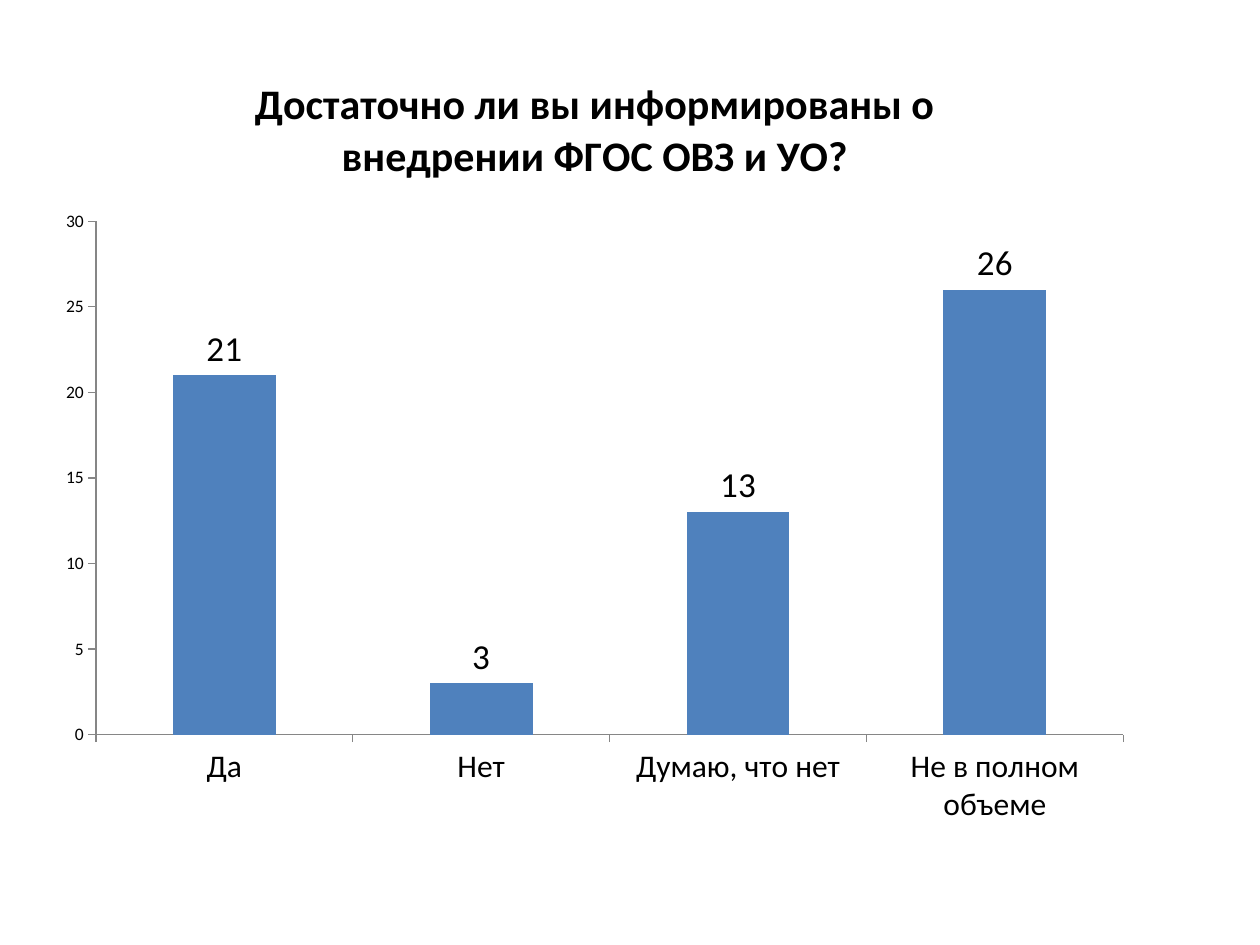
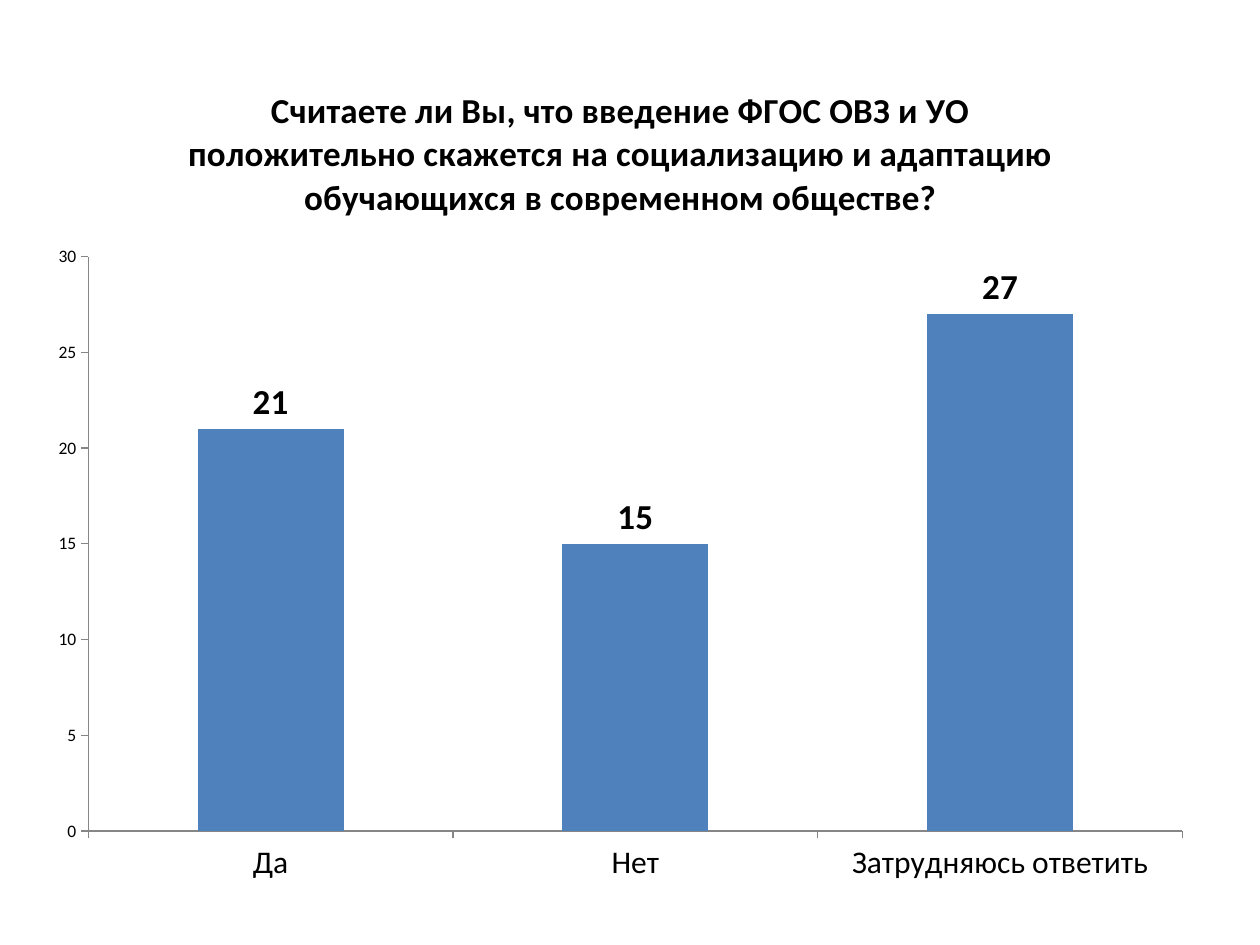
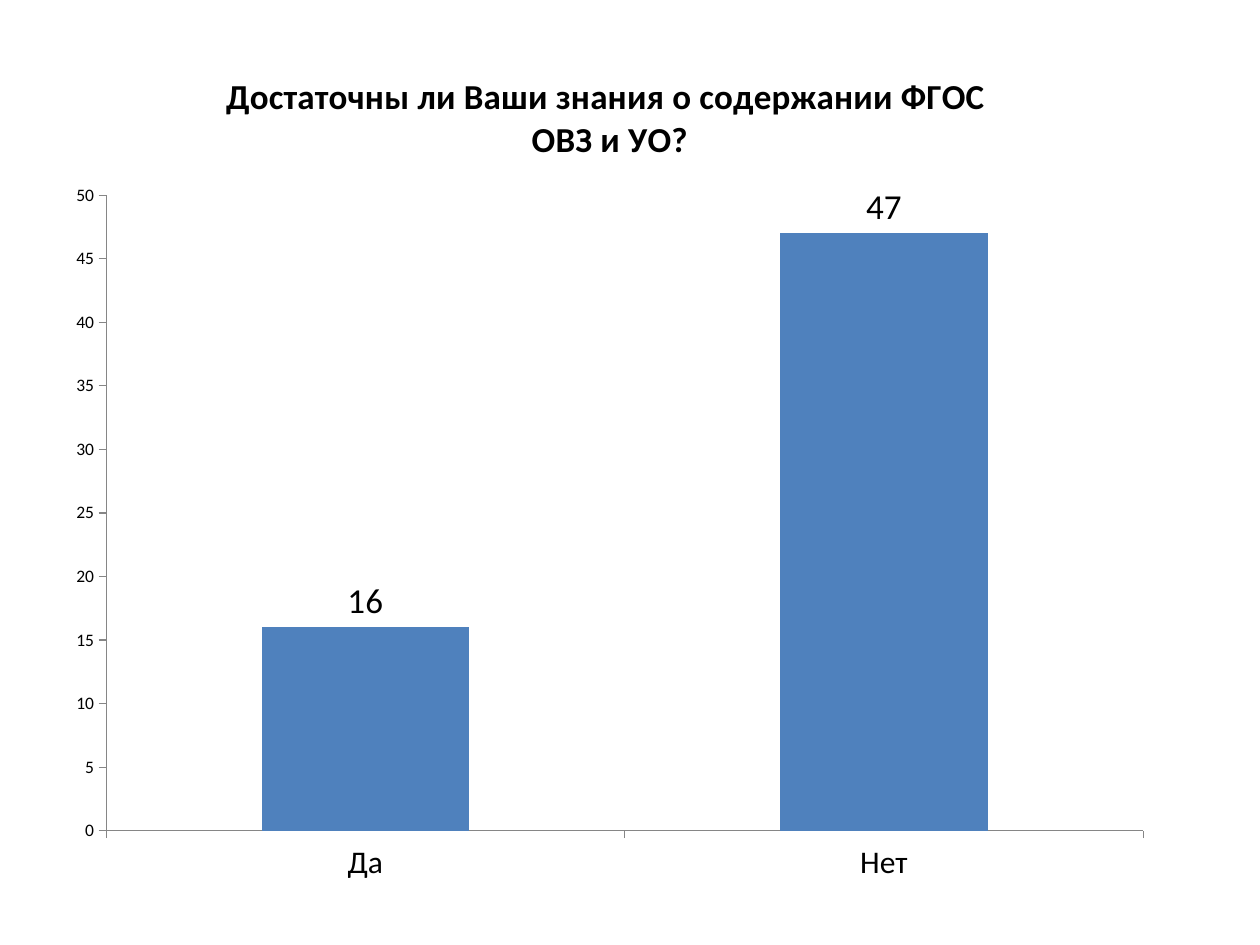
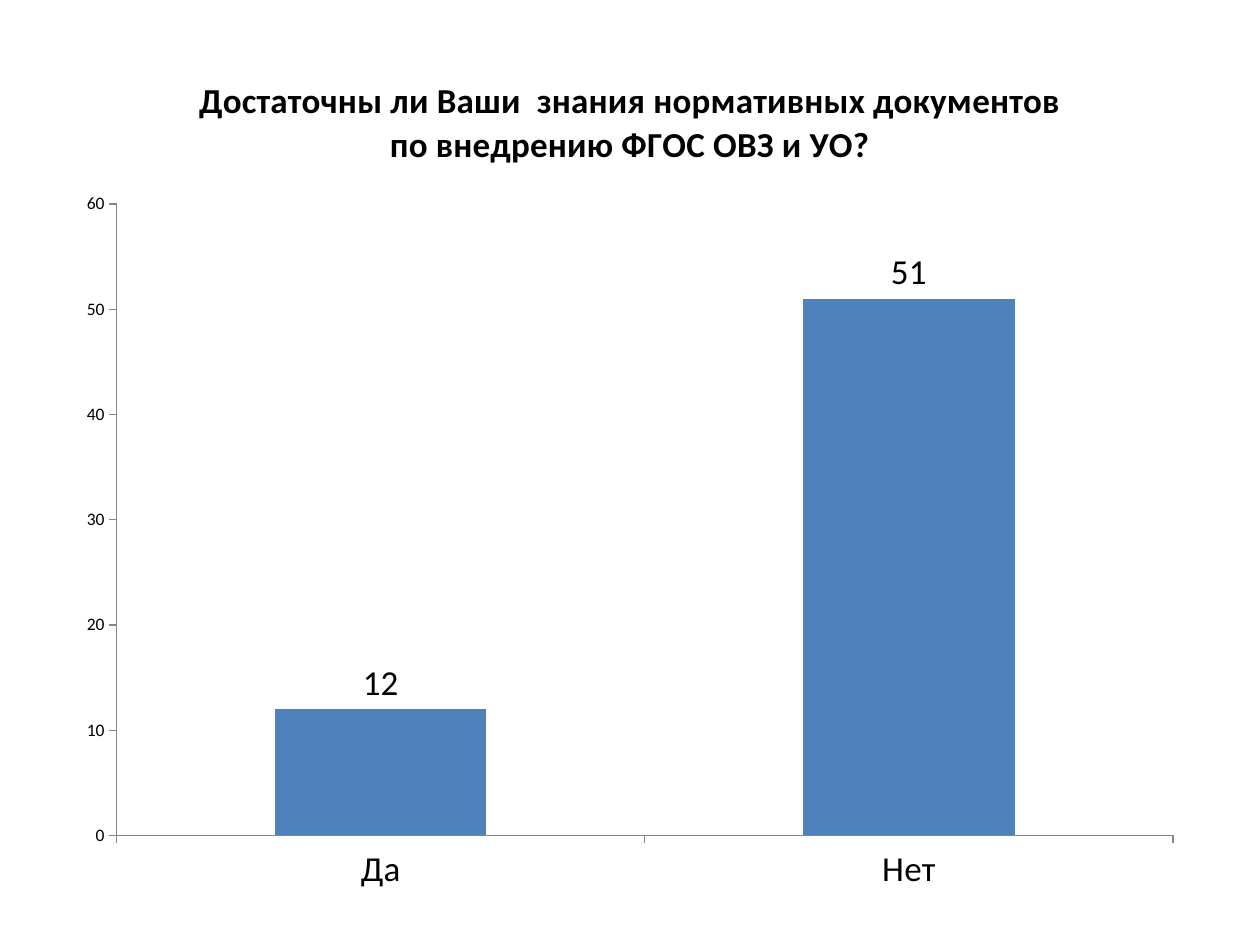
"""Build four slides of survey results, each a titled column chart."""
from dataclasses import dataclass
from typing import Any

from pptx import Presentation
from pptx.chart.data import CategoryChartData
from pptx.dml.color import RGBColor
from pptx.enum.chart import XL_CHART_TYPE as ChartType
from pptx.enum.chart import XL_LABEL_POSITION as LabelPosition
from pptx.enum.chart import XL_TICK_MARK as TickMark
from pptx.util import Emu, Pt

PX = 9144
SLIDE_SIZE = (1000, 750)
BLANK_LAYOUT = 6

BLACK = RGBColor(0x00, 0x00, 0x00)
BLUE = RGBColor(0x4F, 0x81, 0xBD)
GRAY = RGBColor(0x86, 0x86, 0x86)

FONT = "Calibri"
AXIS_FORMAT = {
    "has_major_gridlines": False,
    "has_minor_gridlines": False,
    "major_tick_mark": TickMark.OUTSIDE,
    "minor_tick_mark": TickMark.NONE,
}
PLOT_FORMAT = {"gap_width": 150, "vary_by_categories": False, "has_data_labels": True}
LABEL_FORMAT = {"show_value": True, "position": LabelPosition.OUTSIDE_END}


@dataclass(frozen=True)
class Question:
    """A survey question, its answers and the place of its chart in px."""

    title: str
    answers: dict[str, int]
    box: tuple[int, int, int, int]
    series_name: str = "Series 1"
    title_size: int = 20
    category_size: int = 18
    bold_labels: bool = False


INFORMED = "Достаточно ли вы информированы о внедрении ФГОС ОВЗ и УО?"
DOCUMENTS = "Достаточны ли Ваши  знания нормативных документов по внедрению ФГОС ОВЗ и УО?"

QUESTIONS = [
    Question(
        INFORMED,
        {"Да": 21, "Нет": 3, "Думаю, что нет": 13, "Не в полном объеме": 26},
        (35, 36, 874, 630),
        series_name=INFORMED,
        title_size=24,
    ),
    Question(
        "Считаете ли Вы, что введение ФГОС ОВЗ и УО положительно скажется "
        "на социализацию и адаптацию обучающихся в современном обществе?",
        {"Да": 21, "Нет": 15, "Затрудняюсь ответить": 27},
        (28, 44, 929, 669),
        bold_labels=True,
    ),
    Question(
        "Достаточны ли Ваши знания о содержании ФГОС \nОВЗ и УО?",
        {"Да": 16, "Нет": 47},
        (43, 36, 882, 677),
    ),
    Question(
        DOCUMENTS,
        {"Да": 12, "Нет": 51},
        (51, 36, 898, 685),
        series_name=DOCUMENTS,
        category_size=20,
    ),
]


def px(length: int) -> Emu:
    """Turn px into EMU."""
    return Emu(length * PX)


def set_format(target: Any, values: dict[str, Any]) -> None:
    """Set each attribute named in the format values."""
    for name, value in values.items():
        setattr(target, name, value)


def set_font(font: Any, size: int, bold: bool = False) -> None:
    """Apply the shared typeface and colour at the given size."""
    set_format(font, {"name": FONT, "size": Pt(size), "bold": bold})
    font.color.rgb = BLACK


def format_title(chart: Any, question: Question) -> None:
    """Write the question above the plot."""
    chart.has_title = True
    chart.chart_title.include_in_layout = False
    text_frame = chart.chart_title.text_frame
    text_frame.text = question.title
    for paragraph in text_frame.paragraphs:
        for run in paragraph.runs:
            set_font(run.font, question.title_size, bold=True)


def format_axes(chart: Any, question: Question) -> None:
    """Give both axes thin gray lines and outside ticks."""
    sizes = ((chart.category_axis, question.category_size), (chart.value_axis, 10))
    for axis, size in sizes:
        set_format(axis, AXIS_FORMAT)
        set_font(axis.tick_labels.font, size)
        axis.format.line.color.rgb = GRAY
        axis.format.line.width = Pt(0.75)


def format_columns(plot: Any, question: Question) -> None:
    """Colour the columns and label them with their values."""
    set_format(plot, PLOT_FORMAT)
    set_format(plot.data_labels, LABEL_FORMAT)
    set_font(plot.data_labels.font, 20, question.bold_labels)
    fill = plot.series[0].format.fill
    fill.solid()
    fill.fore_color.rgb = BLUE


def add_question(slide: Any, question: Question) -> None:
    """Draw the chart of one question."""
    chart_data = CategoryChartData()
    chart_data.categories = list(question.answers)
    chart_data.add_series(question.series_name, list(question.answers.values()))
    chart = slide.shapes.add_chart(
        ChartType.COLUMN_CLUSTERED, *map(px, question.box), chart_data
    ).chart
    set_font(chart.font, 10)
    chart.has_legend = False
    format_title(chart, question)
    format_axes(chart, question)
    format_columns(chart.plots[0], question)


def main() -> None:
    """Build and save the presentation."""
    presentation = Presentation()
    presentation.slide_width, presentation.slide_height = map(px, SLIDE_SIZE)
    for question in QUESTIONS:
        slide = presentation.slides.add_slide(presentation.slide_layouts[BLANK_LAYOUT])
        add_question(slide, question)
    presentation.save("out.pptx")


if __name__ == "__main__":
    main()
